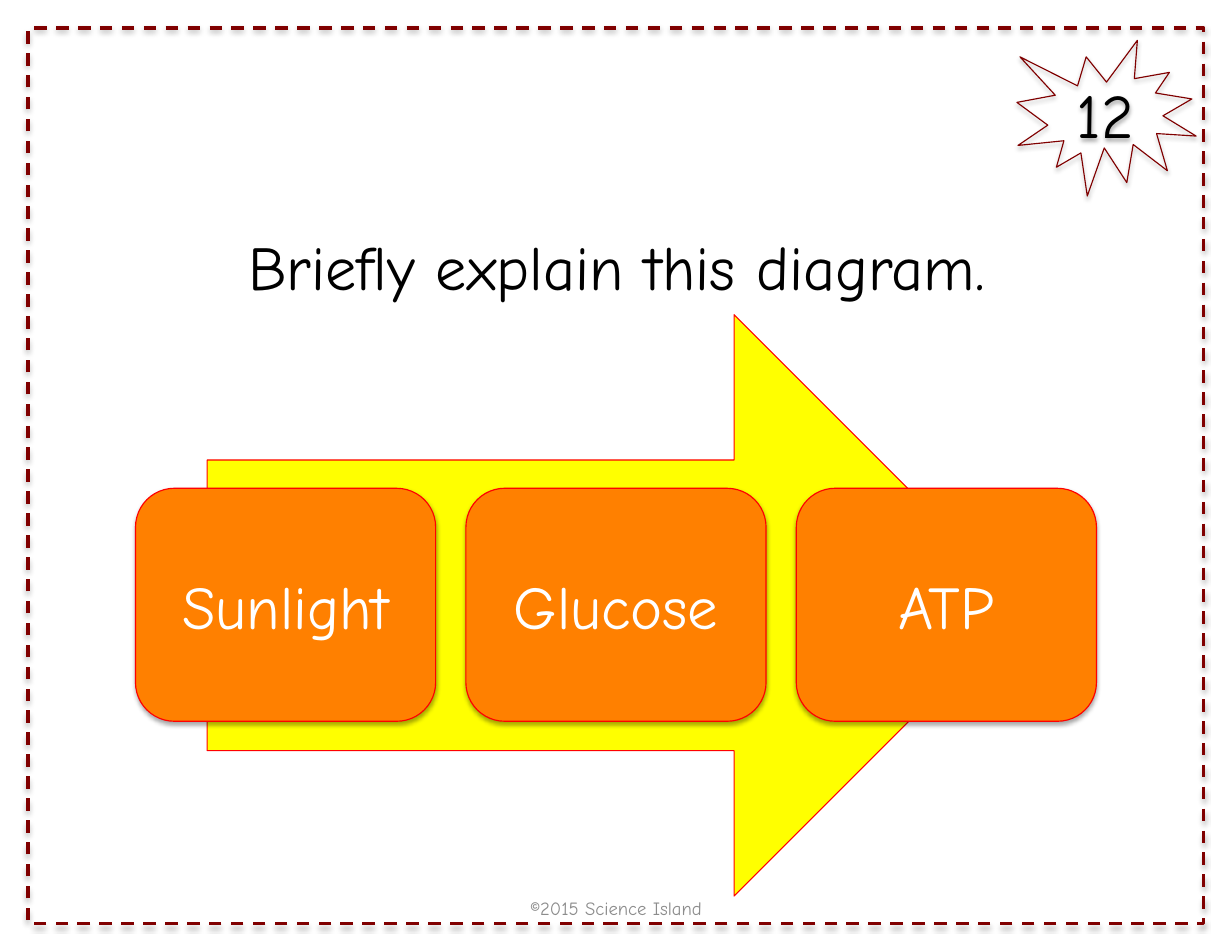
"""Build the energy flow task card."""
from dataclasses import dataclass
from typing import Optional

from lxml.etree import SubElement
from pptx import Presentation
from pptx.dml.color import RGBColor
from pptx.enum.dml import MSO_LINE
from pptx.enum.shapes import MSO_SHAPE
from pptx.enum.text import MSO_ANCHOR, PP_ALIGN
from pptx.oxml.ns import qn
from pptx.util import Inches, Pt

MAROON = RGBColor(0x80, 0x00, 0x00)
RED = RGBColor(0xFF, 0x00, 0x00)
YELLOW = RGBColor(0xFF, 0xFF, 0x00)
ORANGE = RGBColor(0xFF, 0x80, 0x00)
GRAY = RGBColor(0x8C, 0x8C, 0x8C)
BLACK = RGBColor(0x00, 0x00, 0x00)
WHITE = RGBColor(0xFF, 0xFF, 0xFF)
FONT = "Comic Neue"
STEPS = ("Sunlight", "Glucose", "ATP")
LEFT, STRIDE = 1.21, 2.95


@dataclass
class Box:
    left: float
    top: float
    width: float
    height: float

    def place(self) -> tuple:
        return tuple(Inches(n) for n in (self.left, self.top, self.width, self.height))


@dataclass
class Label:
    text: str
    size: int
    color: RGBColor
    pad: float = 0.1
    anchor: MSO_ANCHOR = MSO_ANCHOR.MIDDLE


def write(shape, label: Label) -> None:
    frame = shape.text_frame
    frame.word_wrap = True
    frame.vertical_anchor = label.anchor
    frame.margin_left = frame.margin_right = Inches(label.pad)
    frame.margin_top = frame.margin_bottom = Inches(0.05)
    line = frame.paragraphs[0]
    line.alignment = PP_ALIGN.CENTER
    run = line.add_run()
    run.text = label.text
    run.font.name = FONT
    run.font.size = Pt(label.size)
    run.font.color.rgb = label.color


def shade(shape) -> None:
    effects = shape._element.spPr.find(qn("a:effectLst"))
    shadow = SubElement(effects, qn("a:outerShdw"), blurRad=str(Pt(3.1)),
                        dist=str(Pt(1.8)), dir="5400000", rotWithShape="0")
    color = SubElement(shadow, qn("a:srgbClr"), val="000000")
    SubElement(color, qn("a:alpha"), val="35000")


def draw(slide, kind: MSO_SHAPE, box: Box, line: RGBColor, fill: Optional[RGBColor] = None,
         label: Optional[Label] = None, shadow: bool = True):
    shape = slide.shapes.add_shape(kind, *box.place())
    shape.shadow.inherit = False
    if fill is None:
        shape.fill.background()
    else:
        shape.fill.solid()
        shape.fill.fore_color.rgb = fill
    shape.line.color.rgb = line
    shape.line.width = Pt(0.75)
    if shadow:
        shade(shape)
    if label:
        write(shape, label)
    return shape


def note(slide, box: Box, label: Label) -> None:
    write(slide.shapes.add_textbox(*box.place()), label)


def main() -> None:
    deck = Presentation()
    deck.slide_width, deck.slide_height = Inches(11), Inches(8.5)
    slide = deck.slides.add_slide(deck.slide_layouts[6])

    frame = draw(slide, MSO_SHAPE.RECTANGLE, Box(0.25, 0.25, 10.5, 8), MAROON)
    frame.line.width = Pt(2)
    frame.line.dash_style = MSO_LINE.DASH

    note(slide, Box(3.76, 7.88, 3.48, 0.45), Label("©2015 Science Island", 12, GRAY))
    draw(slide, MSO_SHAPE.EXPLOSION1, Box(9.08, 0.36, 1.6, 1.39), MAROON,
         label=Label("12", 40, BLACK))
    note(slide, Box(1.16, 1.99, 8.69, 0.77),
         Label("Briefly explain this diagram.", 40, BLACK, anchor=MSO_ANCHOR.TOP))

    draw(slide, MSO_SHAPE.RIGHT_ARROW, Box(1.85, 2.81, 7.3, 5.19), RED, YELLOW, shadow=False)
    for i, step in enumerate(STEPS):
        draw(slide, MSO_SHAPE.ROUNDED_RECTANGLE, Box(LEFT + i * STRIDE, 4.36, 2.68, 2.08),
             RED, ORANGE, Label(step, 39, WHITE, pad=0.16))

    deck.save("out.pptx")


if __name__ == "__main__":
    main()
